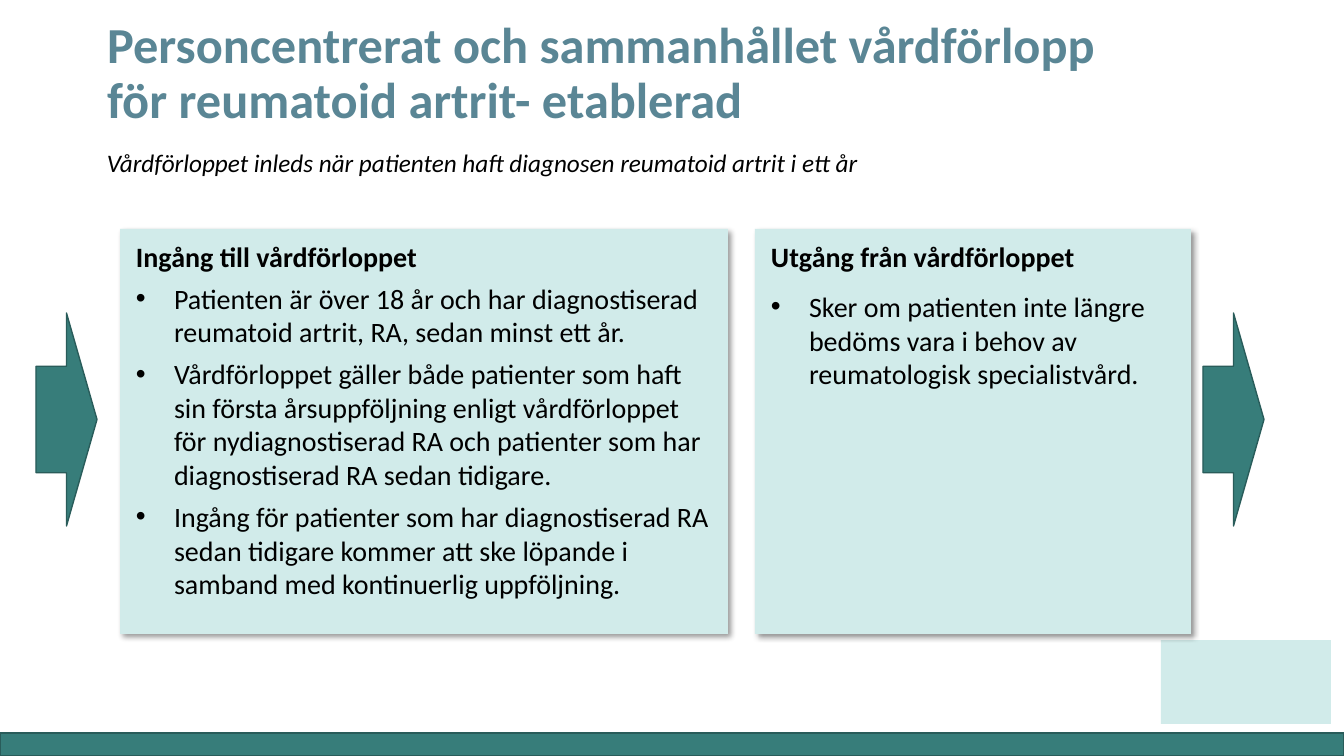
from dataclasses import dataclass

from lxml.etree import SubElement
from pptx import Presentation
from pptx.dml.color import RGBColor
from pptx.enum.shapes import MSO_SHAPE
from pptx.enum.text import MSO_ANCHOR, MSO_AUTO_SIZE, PP_ALIGN
from pptx.oxml.ns import qn
from pptx.util import Pt

EMU_PER_PX = 914400 / 100.8
TEAL, DARK_TEAL, MINT = "377D7A", "295C5A", "D1EBEA"
TITLE_BLUE, BLACK = "5A8695", "000000"


@dataclass(frozen=True)
class Frame:
    left: int
    top: int
    width: int
    height: int


@dataclass(frozen=True)
class Card:
    frame: Frame
    heading: str
    bullets: tuple[str, ...]
    gap: int


CARD_TOP, CARD_HEIGHT = 229, 405
CARDS = [
    Card(Frame(120, CARD_TOP, 608, CARD_HEIGHT), "Ingång till vårdförloppet", (
        "Patienten är över 18 år och har diagnostiserad reumatoid artrit, RA, "
        "sedan minst ett år.",
        "Vårdförloppet gäller både patienter som haft sin första årsuppföljning "
        "enligt vårdförloppet för nydiagnostiserad RA och patienter som har "
        "diagnostiserad RA sedan tidigare.",
        "Ingång för patienter som har diagnostiserad RA sedan tidigare kommer "
        "att ske löpande i samband med kontinuerlig uppföljning.",
    ), gap=6),
    Card(Frame(755, CARD_TOP, 436, CARD_HEIGHT), "Utgång från vårdförloppet", (
        "Sker om patienten inte längre bedöms vara i behov av reumatologisk "
        "specialistvård.",
    ), gap=12),
]
ARROWS = [Frame(left, 313, 61, 213) for left in (36, 1203)]
BAND = Frame(0, 733, 1344, 23)
SENDER = Frame(1161, 640, 170, 84)


def px(length: int) -> int:
    return round(length * EMU_PER_PX)


def colour(value: str) -> RGBColor:
    return RGBColor.from_string(value)


def apply(target, values: dict) -> None:
    for name, value in values.items():
        setattr(target, name, value)


def place(frame: Frame) -> list[int]:
    return [px(n) for n in (frame.left, frame.top, frame.width, frame.height)]


def write(para, text: str, size: int, ink: str = BLACK, **style) -> None:
    span = para.add_run()
    span.text = text
    apply(span.font, {"name": "Calibri", "size": Pt(size), **style})
    span.font.color.rgb = colour(ink)


def add_block(page, kind: MSO_SHAPE, frame: Frame, fill: str, edge: str = ""):
    box = page.shapes.add_shape(kind, *place(frame))
    box.shadow.inherit = False
    box.fill.solid()
    box.fill.fore_color.rgb = colour(fill)
    if edge:
        box.line.color.rgb = colour(edge)
        box.line.width = Pt(1)
    else:
        box.line.fill.background()
    return box


def add_shadow(box) -> None:
    effects = box._element.spPr.find(qn("a:effectLst"))
    shadow = SubElement(effects, qn("a:outerShdw"), blurRad=str(Pt(4)),
                        dist=str(Pt(3)), dir="2700000", algn="tl", rotWithShape="0")
    shade = SubElement(shadow, qn("a:srgbClr"), val=BLACK)
    SubElement(shade, qn("a:alpha"), val="40000")


def add_bullet(para) -> None:
    props = para._p.get_or_add_pPr()
    props.set("marL", str(px(38)))
    props.set("indent", str(-px(38)))
    SubElement(props, qn("a:buFont"), typeface="Arial")
    SubElement(props, qn("a:buChar"), char="•")


def add_card(page, card: Card) -> None:
    box = add_block(page, MSO_SHAPE.RECTANGLE, card.frame, MINT)
    add_shadow(box)
    text = box.text_frame
    apply(text, {"word_wrap": True, "vertical_anchor": MSO_ANCHOR.TOP,
                 "margin_left": px(16), "margin_right": px(10),
                 "margin_top": px(5), "margin_bottom": px(5)})
    heading = text.paragraphs[0]
    apply(heading, {"alignment": PP_ALIGN.LEFT, "line_spacing": 1.15})
    write(heading, card.heading, 20, bold=True)
    for bullet in card.bullets:
        para = text.add_paragraph()
        add_bullet(para)
        apply(para, {"alignment": PP_ALIGN.LEFT, "space_before": Pt(card.gap)})
        write(para, bullet, 20, bold=False)


def add_title(page) -> None:
    title = page.shapes.title
    left, top, width, height = place(Frame(97, 76, 1057, 58))
    apply(title, {"left": left, "top": top, "width": width, "height": height})
    apply(title.text_frame, {"word_wrap": True, "auto_size": MSO_AUTO_SIZE.NONE,
                             "vertical_anchor": MSO_ANCHOR.BOTTOM})
    para = title.text_frame.paragraphs[0]
    apply(para, {"alignment": PP_ALIGN.LEFT, "line_spacing": 0.9})
    write(para, "Personcentrerat och sammanhållet vårdförlopp för reumatoid "
                "artrit- etablerad", 36, TITLE_BLUE, bold=True)


def add_subtitle(page) -> None:
    box = page.shapes.add_textbox(*place(Frame(97, 142, 1150, 72)))
    box.text_frame.word_wrap = True
    write(box.text_frame.paragraphs[0], "Vårdförloppet inleds när patienten haft "
          "diagnosen reumatoid artrit i ett år", 18, italic=True)


def main() -> None:
    deck = Presentation()
    apply(deck, {"slide_width": px(1344), "slide_height": px(756)})
    page = deck.slides.add_slide(deck.slide_layouts.get_by_name("Title Only"))

    # Bottom band and plain sender block
    add_block(page, MSO_SHAPE.RECTANGLE, BAND, TEAL, DARK_TEAL)
    add_block(page, MSO_SHAPE.RECTANGLE, SENDER, MINT)

    # Headings
    add_title(page)
    add_subtitle(page)

    # Entry and exit cards with their arrows
    for card in CARDS:
        add_card(page, card)
    for arrow in ARROWS:
        add_block(page, MSO_SHAPE.RIGHT_ARROW, arrow, TEAL, DARK_TEAL)

    deck.save("out.pptx")


if __name__ == "__main__":
    main()
